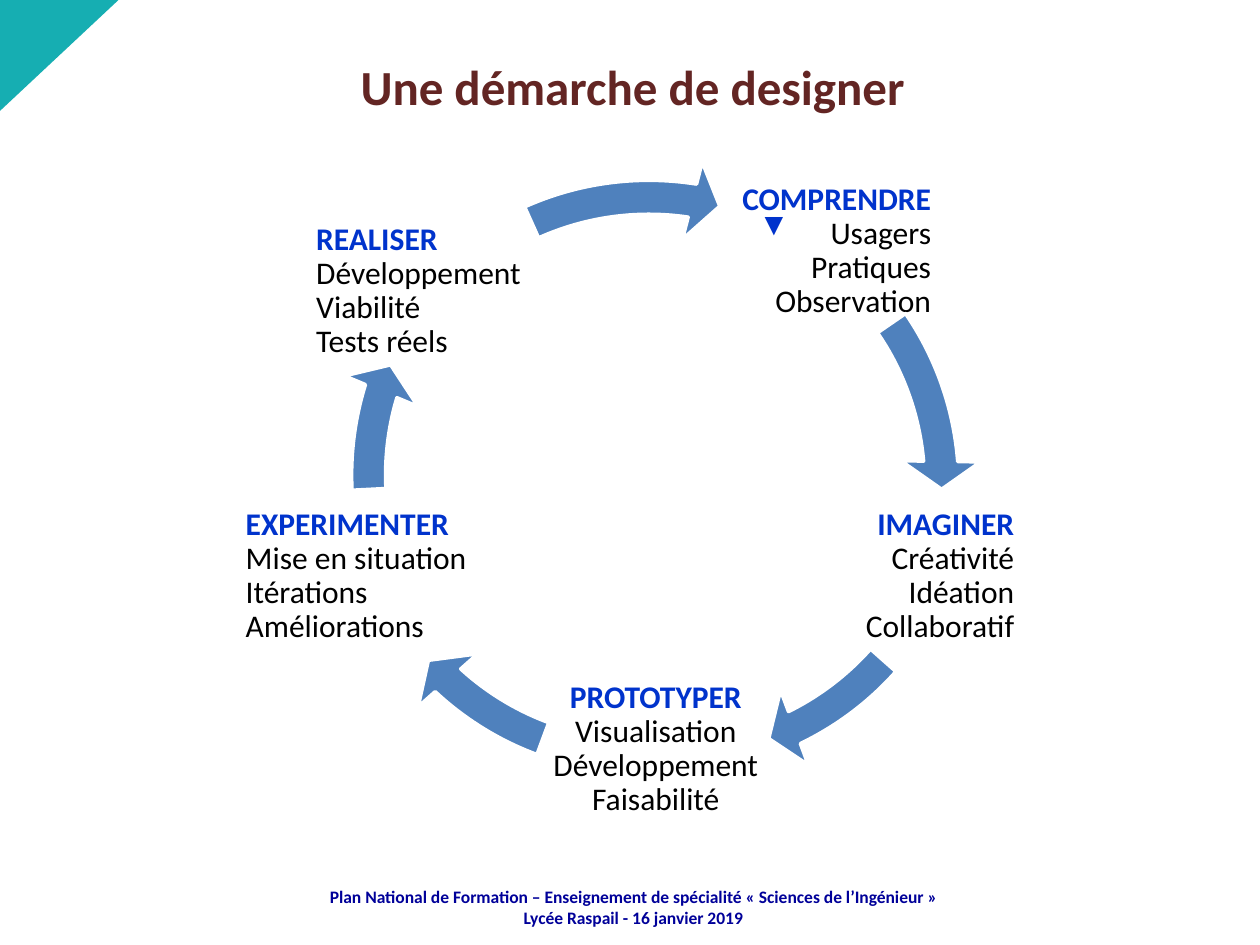
from dataclasses import dataclass
from typing import NamedTuple

from pptx import Presentation
from pptx.dml.color import RGBColor as Rgb
from pptx.enum.shapes import MSO_SHAPE as Kind
from pptx.enum.text import MSO_ANCHOR as Anchor, MSO_AUTO_SIZE as Fit, PP_ALIGN as Align
from pptx.util import Inches, Pt

COLS, ROWS = 100, 75  # grid laid over the slide
WIDE, HIGH = Inches(10), Inches(7.5)


@dataclass(frozen=True)
class Theme:
    font: str = "Calibri"
    sign: str = "Arial"
    teal: Rgb = Rgb(0x16, 0xAE, 0xB2)
    brown: Rgb = Rgb(0x63, 0x25, 0x23)
    blue: Rgb = Rgb(0x00, 0x33, 0xCC)
    navy: Rgb = Rgb(0x00, 0x00, 0x99)
    steel: Rgb = Rgb(0x4F, 0x81, 0xBD)
    black: Rgb = Rgb(0, 0, 0)
    white: Rgb = Rgb(255, 255, 255)
    head: float = 28
    body: float = 18
    foot: float = 10
    edge: float = 2


class Box(NamedTuple):
    """Place on the grid, in columns and rows."""
    col: float
    row: float
    cols: float
    rows: float

    def emu(self) -> tuple[int, ...]:
        return (round(self.col * WIDE / COLS), round(self.row * HIGH / ROWS),
                round(self.cols * WIDE / COLS), round(self.rows * HIGH / ROWS))


class Style(NamedTuple):
    size: float
    color: Rgb
    bold: bool = False
    font: str = Theme.font


class Arc(NamedTuple):
    """Curved arrow: grid corner of its ring, start and end in degrees."""
    col: float
    row: float
    start: float
    end: float


@dataclass(frozen=True)
class Step:
    name: str
    items: tuple[str, ...]
    box: Box
    align: Align
    arc: Arc


LOOK = Theme()
RING = 51.8  # size of the ring of every arrow
BAR, HEAD, TIP = 0.052, 5.59, 0.061  # arrow width, head angle, head width

STEPS = (
    Step("COMPRENDRE", ("Usagers", "Pratiques", "Observation"),
         Box(57.2, 14.5, 17, 10.9), Align.RIGHT, Arc(26.1, 12.6, 325.59, 355.25)),
    Step("IMAGINER", ("Créativité", "Idéation", "Collaboratif"),
         Box(67, 38.8, 13.8, 13.8), Align.RIGHT, Arc(27.2, 11.4, 41.63, 64.05)),
    Step("PROTOTYPER", ("Visualisation", "Développement", "Faisabilité"),
         Box(43, 53.9, 18.1, 11.1), Align.CENTER, Arc(25.1, 11.4, 110.36, 132.78)),
    Step("EXPERIMENTER", ("Mise en situation", "Itérations", "Améliorations"),
         Box(19.2, 38.8, 21.9, 13.8), Align.LEFT, Arc(26.1, 11.8, 177.12, 197.01)),
    Step("REALISER", ("Développement", "Viabilité", "Tests réels"),
         Box(24.8, 17.4, 19.3, 11.4), Align.LEFT, Arc(25.6, 12.5, 245.85, 278.73)),
)
FOOT = ("Plan National de Formation – Enseignement de spécialité « Sciences de l’Ingénieur »",
        "Lycée Raspail - 16 janvier 2019")


def place(shape, box: Box) -> None:
    shape.left, shape.top, shape.width, shape.height = box.emu()


def write(shape, lines: list[tuple[str, Style]], align: Align, anchor: Anchor,
          inset: tuple[float, float], gap: float = 1.0) -> None:
    """Fill a shape with one paragraph per line; inset is (side, top) in inches."""
    frame = shape.text_frame
    frame.word_wrap = True
    frame.auto_size = Fit.NONE
    frame.vertical_anchor = anchor
    frame.margin_left = frame.margin_right = Inches(inset[0])
    frame.margin_top = frame.margin_bottom = Inches(inset[1])
    for i, (text, style) in enumerate(lines):
        para = frame.paragraphs[0] if i == 0 else frame.add_paragraph()
        para.alignment = align
        para.line_spacing = gap
        run = para.add_run()
        run.text = text
        run.font.name = style.font
        run.font.size = Pt(style.size)
        run.font.bold = style.bold
        run.font.color.rgb = style.color


def draw(slide, kind: Kind, box: Box, color: Rgb):
    shape = slide.shapes.add_shape(kind, *box.emu())
    shape.shadow.inherit = False
    shape.fill.solid()
    shape.fill.fore_color.rgb = color
    shape.line.fill.background()
    return shape


def draw_arc(slide, arc: Arc) -> None:
    shape = draw(slide, Kind.CIRCULAR_ARROW, Box(arc.col, arc.row, RING, RING), LOOK.steel)
    shape.line.color.rgb = LOOK.white
    shape.line.width = Pt(LOOK.edge)
    turn = 0.6  # adjustment units per degree
    for i, value in enumerate((BAR, HEAD * turn, arc.end * turn, arc.start * turn, TIP)):
        shape.adjustments[i] = value


def draw_step(slide, step: Step) -> None:
    label = slide.shapes.add_textbox(*step.box.emu())
    lines = [(step.name, Style(LOOK.body, LOOK.blue, True))]
    lines += [(item, Style(LOOK.body, LOOK.black)) for item in step.items]
    write(label, lines, step.align, Anchor.MIDDLE, (0.03, 0.03), 0.9)
    draw_arc(slide, step.arc)


def main() -> None:
    deck = Presentation()
    deck.slide_width, deck.slide_height = WIDE, HIGH
    slide = deck.slides.add_slide(deck.slide_layouts[5])

    title = slide.shapes.title
    place(title, Box(9.8, 4, 80.8, 5.7))
    write(title, [("Une démarche de designer", Style(LOOK.head, LOOK.brown, True))],
          Align.CENTER, Anchor.TOP, (0.1, 0.05))

    corner = draw(slide, Kind.ISOSCELES_TRIANGLE, Box(0, 0, 9.4, 8.8), LOOK.teal)
    corner.adjustments[0] = 1
    corner.rotation = 180

    foot = slide.shapes.add_textbox(*Box(23.8, 70.3, 52.9, 4).emu())
    style = Style(LOOK.foot, LOOK.navy, True)
    write(foot, [(text, style) for text in FOOT], Align.CENTER, Anchor.TOP, (0, 0))

    for step in STEPS:
        draw_step(slide, step)

    mark = slide.shapes.add_textbox(*Box(59.2, 15.7, 5, 4.1).emu())
    write(mark, [("▼", Style(LOOK.body, LOOK.blue, font=LOOK.sign))],
          Align.LEFT, Anchor.TOP, (0.1, 0.05))

    deck.save("out.pptx")


if __name__ == "__main__":
    main()
